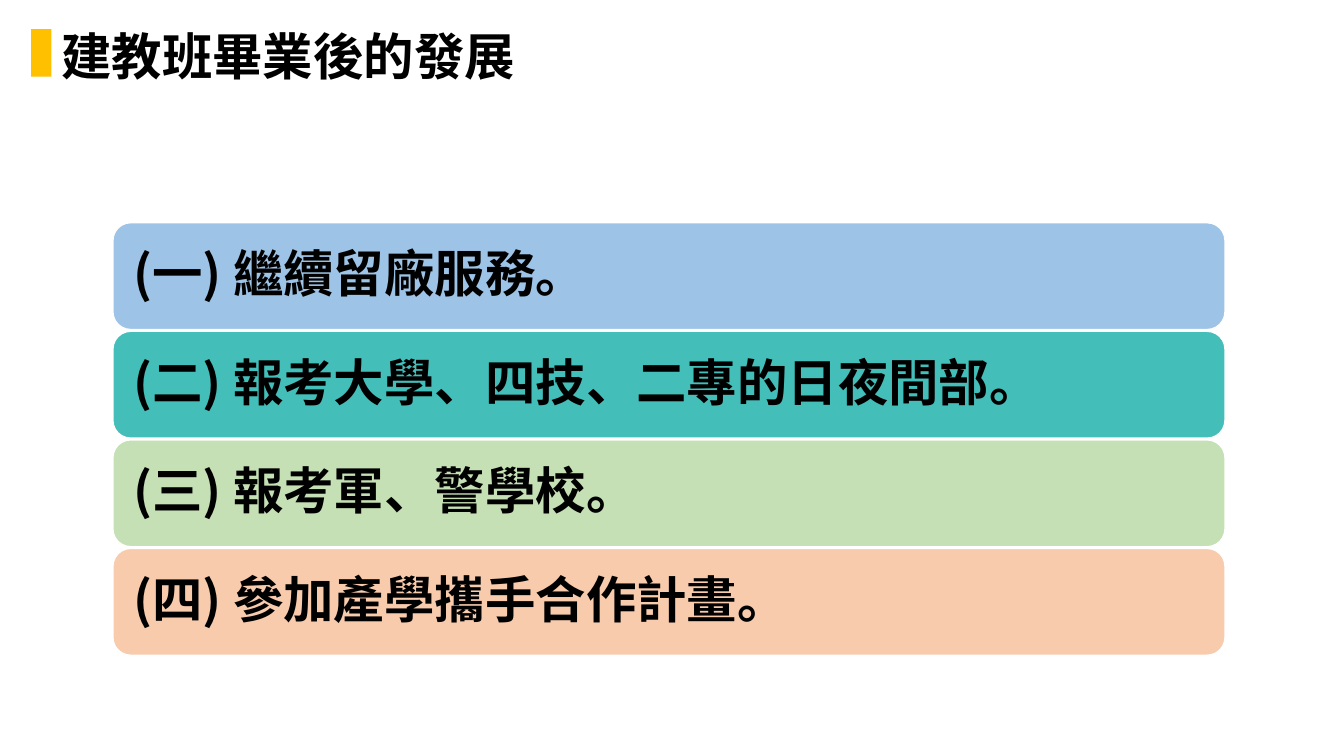
from lxml import etree
from pptx import Presentation
from pptx import util as u
from pptx.dml.color import RGBColor
from pptx.enum import shapes, text
from pptx.oxml.ns import qn

BLACK = RGBColor(0x00, 0x00, 0x00)
WHITE = RGBColor(0xFF, 0xFF, 0xFF)
AMBER = RGBColor(0xFF, 0xC0, 0x00)
BLUE = RGBColor(0x9D, 0xC3, 0xE6)
TEAL = RGBColor(0x43, 0xBE, 0xB9)
GREEN = RGBColor(0xC5, 0xE0, 0xB4)
PEACH = RGBColor(0xF8, 0xCB, 0xAD)
FONT = "Noto Sans CJK SC"

TITLE = "建教班畢業後的發展"
PATHWAYS = [
    ("(一) 繼續留廠服務。", BLUE),
    ("(二) 報考大學、四技、二專的日夜間部。", TEAL),
    ("(三) 報考軍、警學校。", GREEN),
    ("(四) 參加產學攜手合作計畫。", PEACH),
]

WIDTH, HEIGHT = 13.33, 7.5
BAR_LEFT, BAR_TOP, BAR_WIDTH, BAR_HEIGHT = 1.12, 2.21, 11.03, 1.06
BAR_PITCH = 1.077
BAR_INSET = 0.15


def write(shape, words):
    frame = shape.text_frame
    frame.word_wrap = True
    paragraph = frame.paragraphs[0]
    paragraph.text = words
    paragraph.alignment = text.PP_ALIGN.LEFT
    paragraph.line_spacing = 0.9
    font = paragraph.font
    font.name, font.size, font.bold = FONT, u.Pt(36), True
    font.color.rgb = BLACK
    # East Asian glyphs take their typeface from a separate element.
    latin = paragraph._p.pPr.find(qn("a:defRPr")).find(qn("a:latin"))
    east_asian = etree.Element(qn("a:ea"), typeface=FONT)
    latin.addnext(east_asian)
    return frame


def add_block(slide, kind, box, fill):
    block = slide.shapes.add_shape(kind, *map(u.Inches, box))
    block.shadow.inherit = False
    block.fill.solid()
    block.fill.fore_color.rgb = fill
    return block


def main():
    presentation = Presentation()
    presentation.slide_width = u.Inches(WIDTH)
    presentation.slide_height = u.Inches(HEIGHT)
    slide = presentation.slides.add_slide(presentation.slide_layouts[6])

    for row, (words, color) in enumerate(PATHWAYS):
        box = (BAR_LEFT, BAR_TOP + row * BAR_PITCH, BAR_WIDTH, BAR_HEIGHT)
        bar = add_block(slide, shapes.MSO_SHAPE.ROUNDED_RECTANGLE, box, color)
        bar.line.color.rgb = WHITE
        bar.line.width = u.Pt(1)
        frame = write(bar, words)
        frame.vertical_anchor = text.MSO_ANCHOR.MIDDLE
        frame.margin_left = frame.margin_right = u.Inches(BAR_INSET)
        frame.margin_top = frame.margin_bottom = u.Inches(BAR_INSET)

    marker = add_block(slide, shapes.MSO_SHAPE.RECTANGLE, (0.31, 0.29, 0.2, 0.47), AMBER)
    marker.line.fill.background()
    title = slide.shapes.add_textbox(*map(u.Inches, (0.51, 0.27, 9.72, 0.49)))
    write(title, TITLE)

    presentation.save("out.pptx")


if __name__ == "__main__":
    main()
